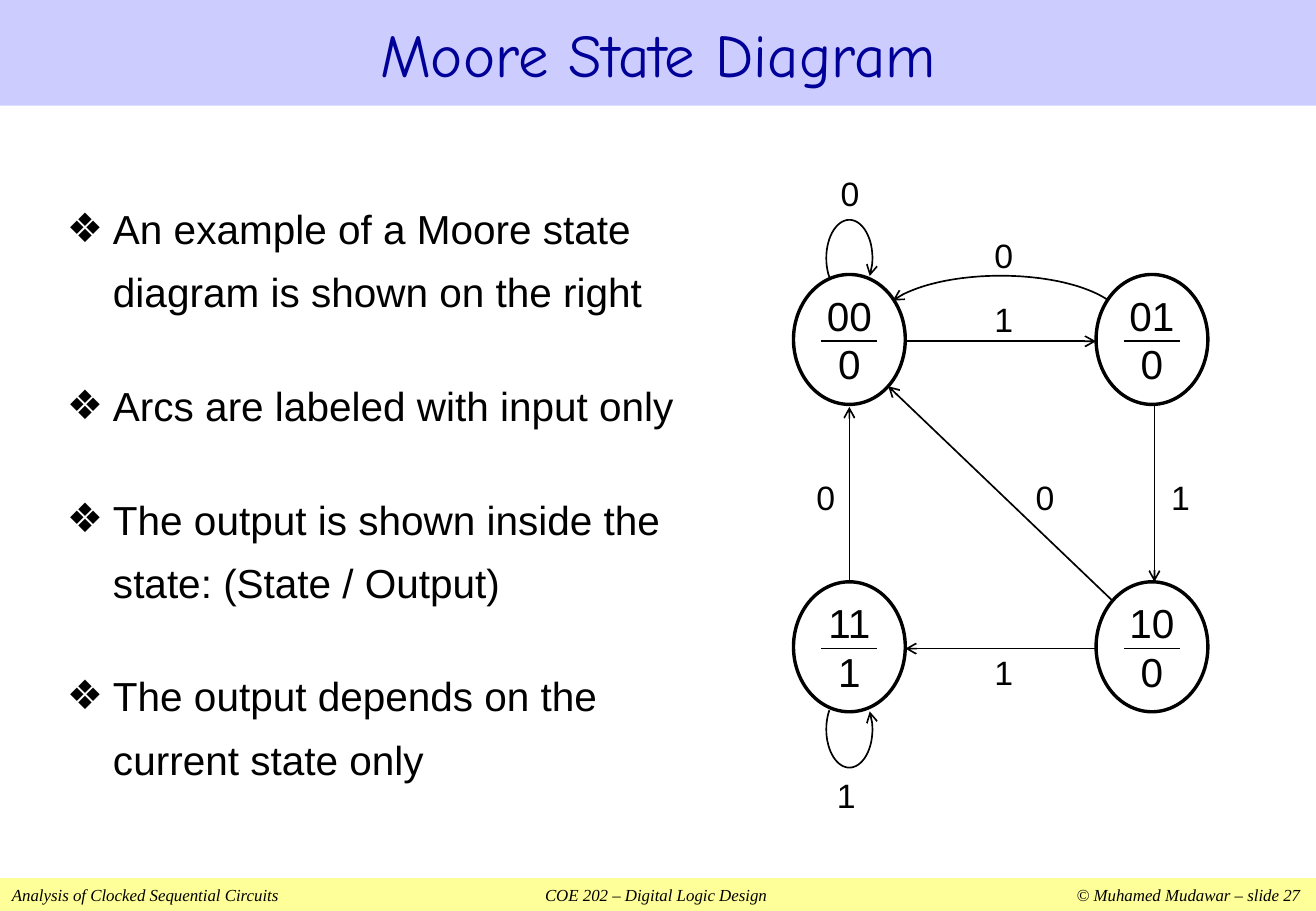
from math import cos, radians, sin

from lxml import etree
from pptx import Presentation
from pptx.dml.color import RGBColor
from pptx.enum.shapes import MSO_CONNECTOR, MSO_SHAPE
from pptx.enum.text import MSO_ANCHOR, MSO_AUTO_SIZE, PP_ALIGN
from pptx.oxml.ns import qn
from pptx.util import Inches, Pt

STRAIGHT = MSO_CONNECTOR.STRAIGHT
RECTANGLE, OVAL = MSO_SHAPE.RECTANGLE, MSO_SHAPE.OVAL
MIDDLE, TOP = MSO_ANCHOR.MIDDLE, MSO_ANCHOR.TOP
CENTER, LEFT = PP_ALIGN.CENTER, PP_ALIGN.LEFT
COLORS = {"title_band": "CCCCFF", "title": "000099", "footer": "FFFF99",
          "ink": "000000", "paper": "FFFFFF"}


def write(shape, lines, size, font="Arial", color="ink", align=CENTER, anchor=MIDDLE,
          margins=(0, 0, 0, 0), wrap=True, italic=False):
    """Fill a shape with formatted paragraphs and return its text frame."""
    frame = shape.text_frame
    frame.text = "\n".join(lines)
    left, top, right, bottom = (Inches(margin) for margin in margins)
    frame_format = {"auto_size": MSO_AUTO_SIZE.NONE, "word_wrap": wrap,
                    "vertical_anchor": anchor, "margin_left": left,
                    "margin_top": top, "margin_right": right, "margin_bottom": bottom}
    for name, value in frame_format.items():
        setattr(frame, name, value)
    font_format = {"name": font, "size": Pt(size), "italic": italic, "bold": False}
    for paragraph in frame.paragraphs:
        paragraph.alignment = align
        for run in paragraph.runs:
            for name, value in font_format.items():
                setattr(run.font, name, value)
            run.font.color.rgb = RGBColor.from_string(COLORS[color])
    return frame


def draw_stroke(shape, arrow=True):
    """Give a line or curve a thin black stroke, with an arrow at its end."""
    shape.line.color.rgb = RGBColor.from_string(COLORS["ink"])
    shape.line.width = Pt(1)
    if arrow:
        etree.SubElement(shape.line._get_or_add_ln(), qn("a:tailEnd"), type="arrow")
    etree.SubElement(shape._element.spPr, qn("a:effectLst"))


presentation = Presentation()
presentation.slide_width = Inches(10.83)
presentation.slide_height = Inches(7.5)
slide = presentation.slides.add_slide(presentation.slide_layouts[1])
shapes = slide.shapes
title, body = slide.placeholders

# Title band and body box
for placeholder, box in ((title, (0, 0, 10.83, 0.87)), (body, (0.45, 1.51, 5.41, 5.2))):
    for name, value in zip(("left", "top", "width", "height"), box):
        setattr(placeholder, name, Inches(value))
title.fill.solid()
title.fill.fore_color.rgb = RGBColor.from_string(COLORS["title_band"])
write(title, ["Moore State Diagram"], 36, "Comic Neue", "title",
      margins=(0.1, 0.05, 0.1, 0.05))

# Bulleted list
points = ["An example of a Moore state diagram is shown on the right",
          "Arcs are labeled with input only",
          "The output is shown inside the state: (State / Output)",
          "The output depends on the current state only"]
frame = write(body, points, 24, align=LEFT, anchor=TOP, margins=(0.1, 0.05, 0.1, 0.05))
for paragraph in frame.paragraphs:
    paragraph.line_spacing = 1.3
    paragraph.space_before = Pt(30)
    properties = paragraph._p.get_or_add_pPr()
    properties.set("marL", str(Inches(0.38)))
    properties.set("indent", str(-Inches(0.38)))
    etree.SubElement(properties, qn("a:buFont"), typeface="Arial")
    etree.SubElement(properties, qn("a:buChar"), char="❖")

# Footer with centre and right tab stops
footer = shapes.add_shape(RECTANGLE, 0, Inches(7.23), Inches(10.83), Inches(0.27))
footer.shadow.inherit = False
footer.fill.solid()
footer.fill.fore_color.rgb = RGBColor.from_string(COLORS["footer"])
footer.line.fill.background()
frame = write(footer, ["Analysis of Clocked Sequential Circuits\t"
                       "COE 202 – Digital Logic Design\t© Muhamed Mudawar – slide 27"],
              10, "Times New Roman", align=LEFT, margins=(0.1, 0.05, 0.1, 0.05), italic=True)
tab_list = etree.SubElement(frame.paragraphs[0]._p.get_or_add_pPr(), qn("a:tabLst"))
for position, alignment in ((5.3, "ctr"), (10.6, "r")):
    etree.SubElement(tab_list, qn("a:tab"), pos=str(Inches(position)), algn=alignment)

# Curved transitions: centre, radii, start and end angle (clockwise from the right)
curves = [(8.235, 2.665, 1.015, 0.395, 331, 209),
          (6.99, 2.125, 0.19, 0.315, 150, 388),
          (6.99, 6.005, 0.19, 0.315, 210, -28)]
STEPS = 40
for center_x, center_y, radius_x, radius_y, start, end in curves:
    angles = [radians(start + (end - start) * step / STEPS) for step in range(STEPS + 1)]
    vertices = [(Inches(center_x + radius_x * cos(angle)),
                 Inches(center_y + radius_y * sin(angle))) for angle in angles]
    builder = shapes.build_freeform(*vertices[0])
    builder.add_line_segments(vertices[1:], close=False)
    curve = builder.convert_to_shape()
    curve.fill.background()
    draw_stroke(curve)

# States with a rule between state and output
states = [(6.53, 2.26, "00", "0"), (9.02, 2.26, "01", "0"),
          (9.02, 4.79, "10", "0"), (6.53, 4.79, "11", "1")]
for left, top, state, output in states:
    circle = shapes.add_shape(OVAL, Inches(left), Inches(top), Inches(0.92), Inches(1.07))
    circle.shadow.inherit = False
    circle.fill.solid()
    circle.fill.fore_color.rgb = RGBColor.from_string(COLORS["paper"])
    circle.line.color.rgb = RGBColor.from_string(COLORS["ink"])
    circle.line.width = Pt(2)
    write(circle, [state, output], 24, margins=(0, 0.05, 0, 0.05))
    rule_y = Inches(top + 0.55)
    rule = shapes.add_connector(STRAIGHT, Inches(left + 0.23), rule_y,
                                Inches(left + 0.69), rule_y)
    draw_stroke(rule, arrow=False)

# Straight transitions
transitions = [(7.45, 2.81, 9.02, 2.81), (9.5, 3.33, 9.5, 4.79), (9.02, 5.34, 7.45, 5.34),
               (6.99, 4.79, 6.99, 3.35), (9.16, 4.95, 7.31, 3.18)]
for transition in transitions:
    draw_stroke(shapes.add_connector(STRAIGHT, *map(Inches, transition)))

# Input labels
labels = [("0", 6.84, 1.34, 0.31, 0.49), ("0", 8.03, 1.93, 0.46, 0.34),
          ("1", 8.03, 2.46, 0.46, 0.34), ("0", 6.64, 3.85, 0.31, 0.49),
          ("0", 8.41, 3.85, 0.38, 0.49), ("1", 9.56, 3.85, 0.31, 0.49),
          ("1", 8.03, 5.38, 0.46, 0.31), ("1", 6.81, 6.3, 0.31, 0.49)]
for text, *box in labels:
    write(shapes.add_textbox(*map(Inches, box)), [text], 20, wrap=False)

presentation.save("out.pptx")
